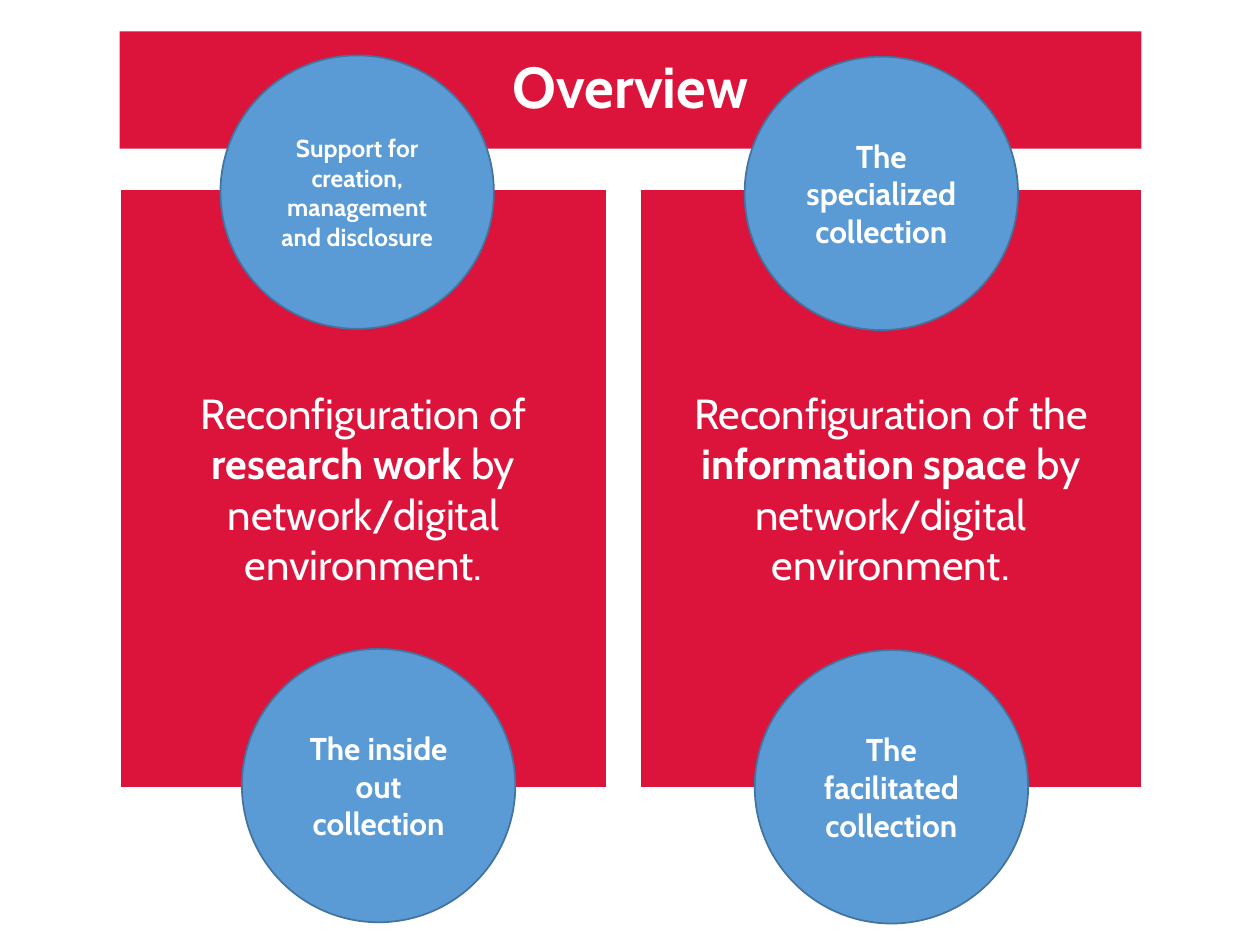
from pptx import Presentation
from pptx.dml.color import RGBColor
from pptx.enum.shapes import MSO_SHAPE as Shape
from pptx.enum.text import MSO_ANCHOR as Anchor, PP_ALIGN as Align
from pptx.util import Inches, Pt

COLORS = {"crimson": "DC143C", "blue": "5B9BD5", "rim": "43739E", "white": "FFFFFF"}
COLUMNS, ROWS = 100, 75
CIRCLE_SIZE = 21.7
LEFT, RIGHT = 9.5, 90.6


class Board:
    """Draws on one slide divided into COLUMNS by ROWS cells."""

    def __init__(self, deck):
        self.slide = deck.slides.add_slide(deck.slide_layouts[6])
        self.column = deck.slide_width / COLUMNS
        self.row = deck.slide_height / ROWS

    def block(self, kind, box, runs, size, fill, line=None, spacing=1.0):
        """Add a filled shape; runs are (text, bold) pairs."""
        left, top, width, height = box
        shape = self.slide.shapes.add_shape(
            kind, round(left * self.column), round(top * self.row),
            round(width * self.column), round(height * self.row))
        shape.shadow.inherit = False
        shape.fill.solid()
        shape.fill.fore_color.rgb = RGBColor.from_string(COLORS[fill])
        if line:
            shape.line.color.rgb = RGBColor.from_string(COLORS[line])
            shape.line.width = Pt(1)
        else:
            shape.line.fill.background()
        frame = shape.text_frame
        for name, value in {"word_wrap": True, "vertical_anchor": Anchor.MIDDLE}.items():
            setattr(frame, name, value)
        paragraph = frame.paragraphs[0]
        for name, value in {"alignment": Align.CENTER, "line_spacing": spacing}.items():
            setattr(paragraph, name, value)
        for text, bold in runs:
            run = paragraph.add_run()
            run.text = text
            for name, value in {"name": "Cabin", "size": Pt(size), "bold": bold}.items():
                setattr(run.font, name, value)
            run.font.color.rgb = RGBColor.from_string(COLORS["white"])

    def title(self, text):
        self.block(Shape.RECTANGLE, (LEFT, 2.5, RIGHT - LEFT, 9.3), [(text, True)],
                   33, "crimson", spacing=0.9)

    def panel(self, left, right, runs):
        self.block(Shape.RECTANGLE, (left, 15, right - left, 47.5), runs,
                   24, "crimson", "white")

    def circle(self, left, top, text, size=18):
        self.block(Shape.OVAL, (left, top, CIRCLE_SIZE, CIRCLE_SIZE), [(text, True)],
                   size, "blue", "rim")


def main():
    deck = Presentation()
    deck.slide_width, deck.slide_height = Inches(10), Inches(7.5)
    board = Board(deck)
    ending = ("by network/digital environment.", False)
    board.panel(LEFT, 48.2, [("Reconfiguration of ", False),
                             ("research work ", True), ending])
    board.panel(50.8, RIGHT, [("Reconfiguration of the ", False),
                              ("information space ", True), ending])
    board.circle(19.2, 51.5, "The inside out collection")
    board.circle(59.9, 51.6, "The facilitated collection")
    board.title("Overview")
    board.circle(17.5, 4.4, "Support for creation, management and disclosure", size=14)
    board.circle(59.1, 4.5, "The specialized collection")
    deck.save("out.pptx")


if __name__ == "__main__":
    main()
